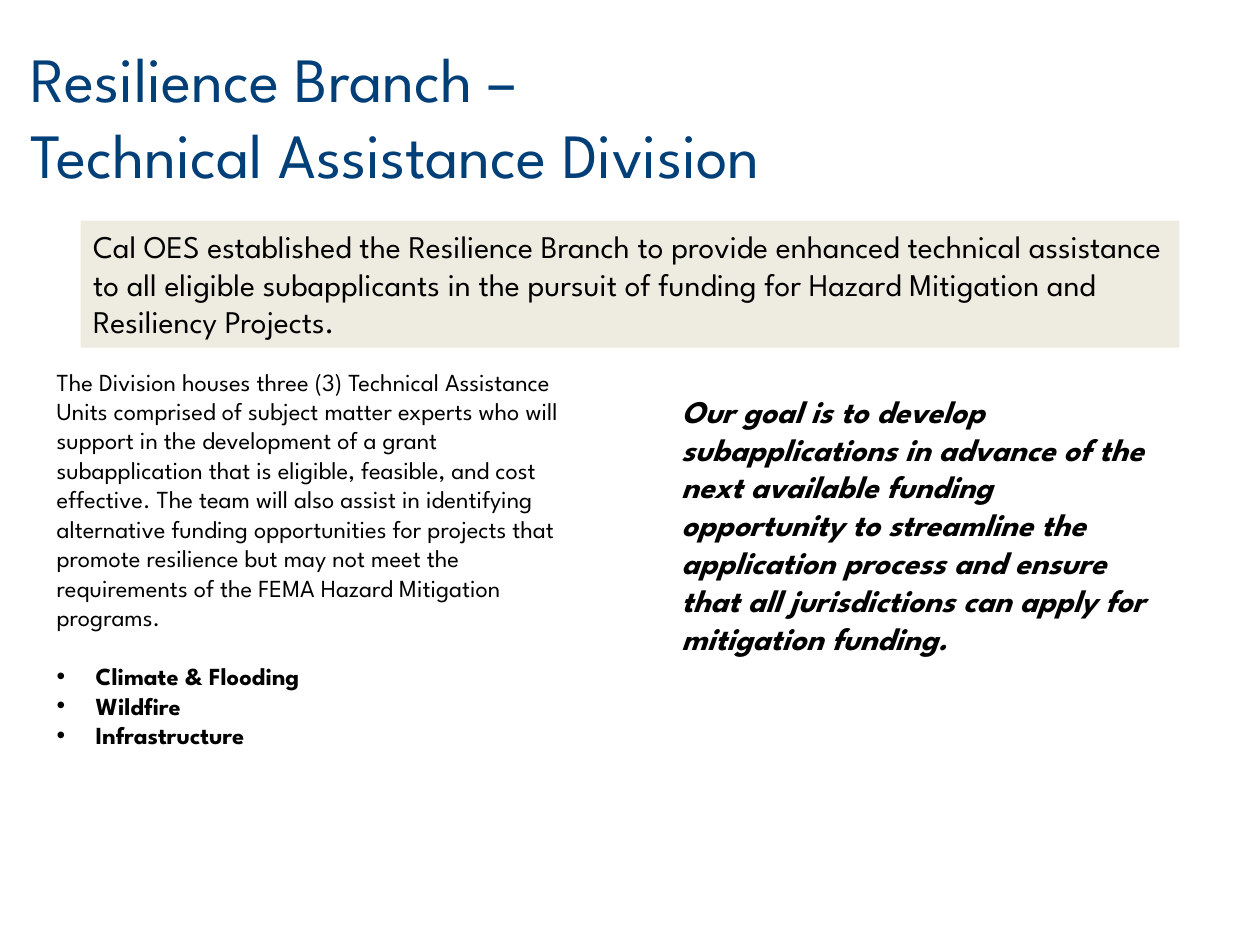
from lxml import etree
from pptx import Presentation
from pptx.dml.color import RGBColor
from pptx.enum import shapes, text
from pptx.oxml.ns import qn
from pptx.util import Inches, Pt

NAVY = RGBColor(0x00, 0x3F, 0x78)
SAND = RGBColor(0xEE, 0xEC, 0xE1)
WHITE = RGBColor(0xFF, 0xFF, 0xFF)
BLACK = RGBColor(0x00, 0x00, 0x00)
FONT = "League Spartan"

TITLE = "Resilience Branch –\vTechnical Assistance Division"
MISSION = (
    "Cal OES established the Resilience Branch to provide enhanced technical "
    "assistance to all eligible subapplicants in the pursuit of funding for "
    "Hazard Mitigation and Resiliency Projects."
)
DIVISION = (
    "The Division houses three (3) Technical Assistance Units comprised of "
    "subject matter experts who will support in the development of a grant "
    "subapplication that is eligible, feasible, and cost effective. The team "
    "will also assist in identifying alternative funding opportunities for "
    "projects that promote resilience but may not meet the requirements of "
    "the FEMA Hazard Mitigation programs."
)
UNITS = ["Climate & Flooding", "Wildfire", "Infrastructure"]
GOAL = (
    "Our goal is to develop subapplications in advance of the next available "
    "funding opportunity to streamline the application process and ensure "
    "that all jurisdictions can apply for mitigation funding."
)


def apply(target, values):
    for name, value in values.items():
        setattr(target, name, value)


def place(shape, box):
    names = ("left", "top", "width", "height")
    apply(shape, dict(zip(names, map(Inches, box))))


def write(para, words, size, color=BLACK, **style):
    para.text = words
    apply(para, {"alignment": text.PP_ALIGN.LEFT, "line_spacing": 1.0,
                 "space_before": Pt(0), "space_after": Pt(0)})
    for font in [para.font, *(span.font for span in para.runs)]:
        apply(font, {"name": FONT, "size": Pt(size), **style})
        font.color.rgb = color


def set_bullet(para, mark=None):
    indent = Inches(0.31) if mark else 0
    props = para._p.get_or_add_pPr()
    props.set("marL", str(indent))
    props.set("indent", str(-indent))
    if mark:
        etree.SubElement(props, qn("a:buFont")).set("typeface", "Arial")
        etree.SubElement(props, qn("a:buChar")).set("char", mark)
    else:
        etree.SubElement(props, qn("a:buNone"))


def add_title(page, box):
    title = page.shapes.title
    place(title, box)
    apply(title.text_frame, {
        "margin_left": 0, "margin_top": 0, "margin_right": 0,
        "margin_bottom": 0, "word_wrap": True,
        "auto_size": text.MSO_AUTO_SIZE.NONE,
        "vertical_anchor": text.MSO_ANCHOR.MIDDLE,
    })
    write(title.text_frame.paragraphs[0], TITLE, 36, NAVY)


def add_panel(page, box, words, fill, **style):
    panel = page.shapes.add_shape(shapes.MSO_SHAPE.RECTANGLE, *map(Inches, box))
    panel.shadow.inherit = False
    panel.fill.solid()
    panel.fill.fore_color.rgb = fill
    panel.line.fill.background()
    apply(panel.text_frame, {"word_wrap": True,
                             "vertical_anchor": text.MSO_ANCHOR.TOP})
    write(panel.text_frame.paragraphs[0], words, 18, **style)


def add_division(page, box):
    body = page.placeholders[1]
    place(body, box)
    frame = body.text_frame
    apply(frame, {"word_wrap": True, "auto_size": text.MSO_AUTO_SIZE.NONE,
                  "vertical_anchor": text.MSO_ANCHOR.TOP})
    intro = frame.paragraphs[0]
    set_bullet(intro)
    write(intro, DIVISION, 14)
    for index, unit in enumerate(UNITS):
        para = frame.add_paragraph()
        set_bullet(para, "•")
        write(para, unit, 14, bold=True)
        if index == 0:
            para.space_before = Pt(17)


def main():
    deck = Presentation()
    apply(deck, {"slide_width": Inches(10), "slide_height": Inches(7.5)})
    page = deck.slides.add_slide(deck.slide_layouts[1])
    add_title(page, (0.24, 0.29, 9.59, 1.25))
    add_panel(page, (0.64, 1.75, 8.72, 1.01), MISSION, SAND)
    add_division(page, (0.35, 2.86, 4.34, 3.4))
    add_panel(page, (5.31, 3.06, 3.98, 2.22), GOAL, WHITE, bold=True, italic=True)
    deck.save("out.pptx")


if __name__ == "__main__":
    main()
